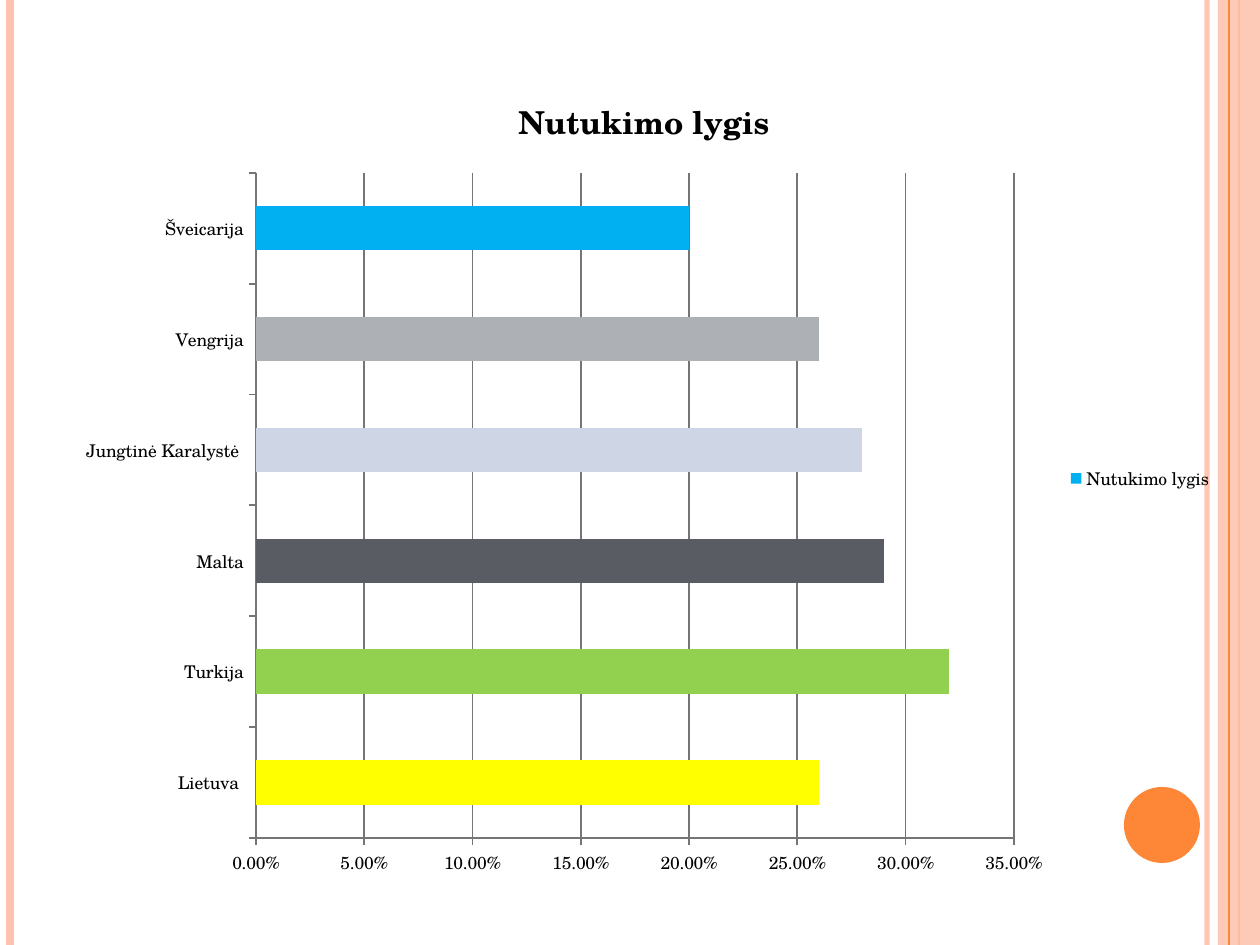
from lxml.etree import SubElement
from pptx import Presentation
from pptx.chart.data import CategoryChartData
from pptx.dml.color import RGBColor
from pptx.enum.chart import XL_CHART_TYPE as ChartType, XL_LEGEND_POSITION as LegendSide
from pptx.enum.chart import XL_TICK_MARK as TickMark
from pptx.enum.shapes import MSO_CONNECTOR as Connector, MSO_SHAPE as Shape
from pptx.oxml import parse_xml
from pptx.oxml.ns import nsdecls, qn
from pptx.util import Emu, Pt

PX = 914400 / 126
WIDTH, HEIGHT = 1260, 945
FONT = "TeX Gyre Schola"
BLACK = RGBColor(0x00, 0x00, 0x00)
GREY = RGBColor(0x75, 0x75, 0x75)
PEACH = RGBColor(0xFE, 0xC3, 0xAE)
ORANGE = RGBColor(0xFE, 0x86, 0x37)
BLUE = RGBColor(0x00, 0xB0, 0xF0)
YELLOW = RGBColor(0xFF, 0xFF, 0x00)
GREEN = RGBColor(0x92, 0xD0, 0x50)
SLATE = RGBColor(0x59, 0x5D, 0x63)
PALE_BLUE = RGBColor(0xCE, 0xD6, 0xE6)
SILVER = RGBColor(0xAD, 0xB0, 0xB5)

TITLE = "Nutukimo lygis"
OBESITY = [
    ("Lietuva ", 0.26, YELLOW),
    ("Turkija", 0.32, GREEN),
    ("Malta", 0.29, SLATE),
    ("Jungtinė Karalystė ", 0.28, PALE_BLUE),
    ("Vengrija", 0.26, SILVER),
    ("Šveicarija", 0.2, BLUE),
]


def px(*lengths):
    """Turn pixel lengths into EMU."""
    return [Emu(round(length * PX)) for length in lengths]


def set_opacity(element, percent):
    """Make the solid colour inside an element partly transparent."""
    color = next(element.iter(qn("a:srgbClr")))
    SubElement(color, qn("a:alpha")).set("val", str(percent * 1000))


def add_stripe(page, x, top, height, color, points, opacity=100):
    """Draw a vertical line."""
    stripe = page.shapes.add_connector(Connector.STRAIGHT, *px(x, top, x, top + height))
    stripe.line.color.rgb = color
    stripe.line.width = Pt(points)
    SubElement(stripe._element.spPr, qn("a:effectLst"))
    if opacity < 100:
        set_opacity(stripe._element.spPr, opacity)


def add_solid(page, kind, box, color):
    """Draw a filled shape without outline."""
    solid = page.shapes.add_shape(kind, *px(*box))
    solid.shadow.inherit = False
    solid.fill.solid()
    solid.fill.fore_color.rgb = color
    solid.line.fill.background()
    return solid


def add_frame(page, box):
    """Draw the edge stripes, the right band and the corner disc."""
    left, top, width, height = box
    right = left + width
    add_stripe(page, right - 53, top, height, PEACH, 3, 93)
    add_stripe(page, left + 10, top, height, PEACH, 4.5)
    add_stripe(page, right - 21, top, height, ORANGE, 1.5)
    band = add_solid(page, Shape.RECTANGLE, (right - 42, top, 42, height), PEACH)
    set_opacity(band._element.spPr, 87)
    add_stripe(page, right - 31, top, height, ORANGE, 0.75)
    add_solid(page, Shape.OVAL, (right - 136, top + height - 158, 76, 76), ORANGE)


def style_line(line):
    """Give a chart line its grey stroke."""
    line.color.rgb = GREY
    line.width = Pt(1)


def style_axis(axis):
    """Give an axis outer ticks and a grey line."""
    axis.major_tick_mark = TickMark.OUTSIDE
    axis.minor_tick_mark = TickMark.NONE
    style_line(axis.format.line)


def place_plot(chart, x, y, width, height):
    """Fix the inner plot area as fractions of the chart."""
    plot_area = chart._chartSpace.chart.plotArea
    for layout in plot_area.findall(qn("c:layout")):
        plot_area.remove(layout)
    plot_area.insert(0, parse_xml(
        f'<c:layout {nsdecls("c")}><c:manualLayout><c:layoutTarget val="inner"/>'
        '<c:xMode val="edge"/><c:yMode val="edge"/>'
        f'<c:x val="{x}"/><c:y val="{y}"/><c:w val="{width}"/><c:h val="{height}"/>'
        '</c:manualLayout></c:layout>'))


def add_obesity_chart(page, box):
    """Draw the bar chart of obesity levels by country."""
    names, values, colors = zip(*OBESITY)
    data = CategoryChartData(number_format="0.00%")
    data.categories = names
    data.add_series(TITLE, values)
    chart = page.shapes.add_chart(ChartType.BAR_CLUSTERED, *px(*box), data).chart
    chart.font.name = FONT
    chart.font.size = Pt(10)
    chart.font.color.rgb = BLACK

    chart.has_title = True
    chart.chart_title.include_in_layout = False
    title = chart.chart_title.text_frame
    title.text = TITLE
    font = title.paragraphs[0].font
    font.name, font.size, font.bold = FONT, Pt(18), True
    font.color.rgb = BLACK

    chart.has_legend = True
    chart.legend.position = LegendSide.RIGHT
    chart.legend.include_in_layout = False

    style_axis(chart.category_axis)
    axis = chart.value_axis
    style_axis(axis)
    axis.minimum_scale, axis.maximum_scale, axis.major_unit = 0, 0.35, 0.05
    axis.tick_labels.number_format = "0.00%"
    axis.tick_labels.number_format_is_linked = False
    axis.has_major_gridlines = True
    style_line(axis.major_gridlines.format.line)

    plot = chart.plots[0]
    plot.gap_width = 150
    plot.vary_by_categories = False
    series = plot.series[0]
    series.format.fill.solid()
    series.format.fill.fore_color.rgb = BLUE
    for index, color in enumerate(colors):
        if color != BLUE:
            fill = series.points[index].format.fill
            fill.solid()
            fill.fore_color.rgb = color
    place_plot(chart, 193 / box[2], 108 / box[3], 758 / box[2], 665 / box[3])


def main():
    """Build the one-page deck."""
    deck = Presentation()
    deck.slide_width, deck.slide_height = px(WIDTH, HEIGHT)
    page = deck.slides.add_slide(deck.slide_layouts[6])
    add_frame(page, (0, 0, WIDTH, HEIGHT))
    add_obesity_chart(page, (63, 65, 1162, 827))
    deck.save("out.pptx")


if __name__ == "__main__":
    main()
